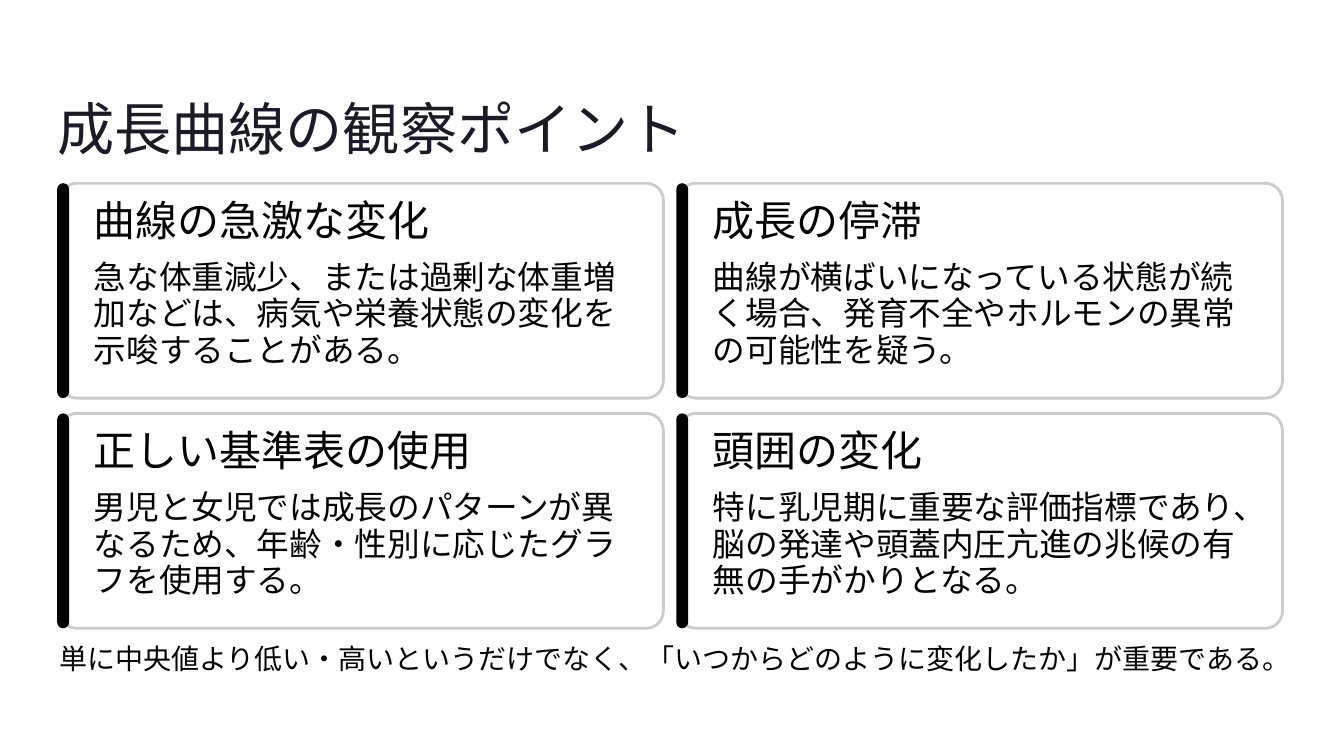
from dataclasses import dataclass
from typing import Any

from lxml import etree
from pptx import Presentation
from pptx import util as u
from pptx.dml.color import RGBColor
from pptx.enum import shapes, text
from pptx.oxml import ns


@dataclass(frozen=True)
class Style:
    font: str
    size: float
    lead: float
    color: str


@dataclass(frozen=True)
class Theme:
    title: Style = Style("Inter", 49, 61.5, "1B1B27")
    head: Style = Style("Inter", 36, 30.5, "030303")
    body: Style = Style("Roboto", 28, 31.5, "030303")
    note: Style = Style("Roboto", 24, 31.5, "030303")
    paper: str = "FFFFFF"
    edge: str = "CCCCCC"
    bar: str = "030303"
    edge_width: float = 2.4
    opacity: int = 95


@dataclass(frozen=True)
class Box:
    left: float
    top: float
    width: float
    height: float

    def place(self) -> tuple:
        return tuple(map(u.Cm, (self.left, self.top, self.width, self.height)))


@dataclass(frozen=True)
class Card:
    head: str
    body: str


THEME = Theme()
CARDS = [
    Card("曲線の急激な変化",
         "急な体重減少、または過剰な体重増加などは、病気や栄養状態の変化を示唆することがある。"),
    Card("成長の停滞",
         "曲線が横ばいになっている状態が続く場合、発育不全やホルモンの異常の可能性を疑う。"),
    Card("正しい基準表の使用",
         "男児と女児では成長のパターンが異なるため、年齢・性別に応じたグラフを使用する。"),
    Card("頭囲の変化",
         "特に乳児期に重要な評価指標であり、脳の発達や頭蓋内圧亢進の兆候の有無の手がかりとなる。"),
]

# Card grid, in centimetres
LEFT, TOP = 1.8, 5.54
WIDTH, HEIGHT = 18.26, 6.5
STEP_X, STEP_Y = 18.72, 6.96
COLUMNS = 2


def write(shape: Any, words: str, style: Style, wrap: bool = False) -> None:
    frame = shape.text_frame
    frame.text = words
    frame.word_wrap = wrap
    frame.auto_size = text.MSO_AUTO_SIZE.NONE
    frame.vertical_anchor = text.MSO_ANCHOR.TOP
    frame.margin_left = frame.margin_right = 0
    frame.margin_top = frame.margin_bottom = 0
    line = frame.paragraphs[0]
    line.alignment = text.PP_ALIGN.LEFT
    line.line_spacing = u.Pt(style.lead)
    font = line.runs[0].font
    font.name = style.font
    font.size = u.Pt(style.size)
    font.color.rgb = RGBColor.from_string(style.color)


def add_text(slide: Any, box: Box, words: str, style: Style, wrap: bool = False) -> None:
    write(slide.shapes.add_textbox(*box.place()), words, style, wrap)


def add_round(slide: Any, box: Box, fill: str, curve: float) -> Any:
    shape = slide.shapes.add_shape(shapes.MSO_SHAPE.ROUNDED_RECTANGLE, *box.place())
    shape.adjustments[0] = curve
    shape.shadow.inherit = False
    shape.fill.solid()
    shape.fill.fore_color.rgb = RGBColor.from_string(fill)
    shape.line.fill.background()
    return shape


def add_card(slide: Any, card: Card, x: float, y: float) -> None:
    # Panel with a slightly see-through fill
    panel = add_round(slide, Box(x, y, WIDTH, HEIGHT), THEME.paper, 0.08)
    panel.line.color.rgb = RGBColor.from_string(THEME.edge)
    panel.line.width = u.Pt(THEME.edge_width)
    tint = panel.fill._xPr.find(".//" + ns.qn("a:srgbClr"))
    etree.SubElement(tint, ns.qn("a:alpha"), val=str(THEME.opacity * 1000))

    # Accent bar and text
    add_round(slide, Box(x - 0.07, y, 0.36, HEIGHT), THEME.bar, 0.5)
    add_text(slide, Box(x + 1.04, y + 0.79, 8.81, 1.35), card.head, THEME.head)
    add_text(slide, Box(x + 1.04, y + 2.29, 16.41, 2.74), card.body, THEME.body, True)


def main() -> None:
    deck = Presentation()
    deck.slide_width, deck.slide_height = u.Cm(40.64), u.Cm(22.86)
    slide = deck.slides.add_slide(deck.slide_layouts[5])

    # Title
    title = slide.shapes.title
    title.left, title.top, title.width, title.height = Box(1.73, 2.74, 19.15, 2.18).place()
    write(title, "成長曲線の観察ポイント", THEME.title)

    # Cards
    for index, card in enumerate(CARDS):
        row, column = divmod(index, COLUMNS)
        add_card(slide, card, LEFT + column * STEP_X, TOP + row * STEP_Y)

    # Closing remark
    add_text(slide, Box(LEFT, 19.3, 36.73, 1.12),
             "単に中央値より低い・高いというだけでなく、「いつからどのように変化したか」が重要である。",
             THEME.note)

    deck.save("out.pptx")


if __name__ == "__main__":
    main()
